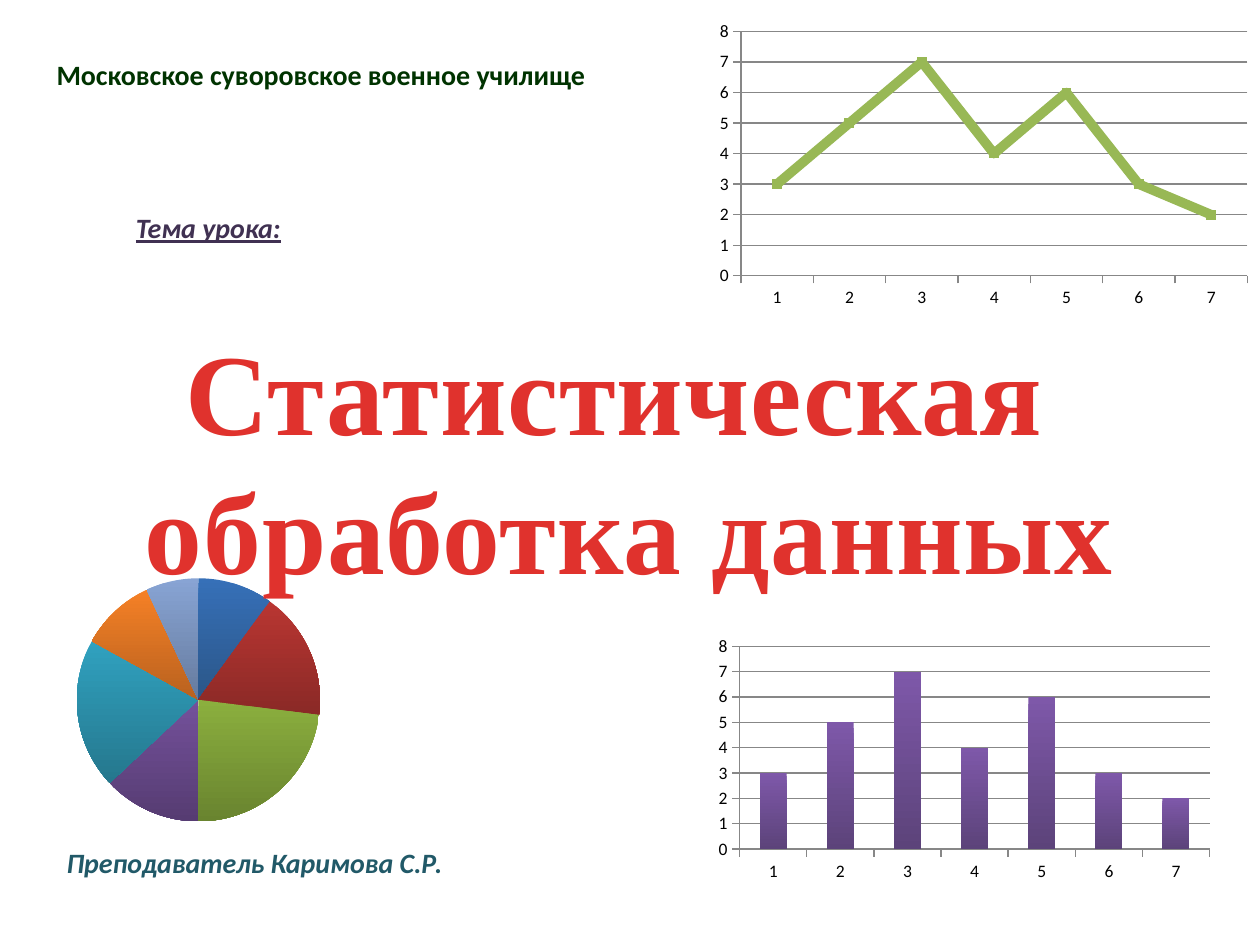
from dataclasses import dataclass

from lxml import etree
from pptx import Presentation, util as u
from pptx.chart import data as chart_data
from pptx.dml.color import RGBColor
from pptx.enum import chart as chart_enum, text
from pptx.oxml import ns

CATEGORIES = [str(number) for number in range(1, 8)]
SCORES = (3, 5, 7, 4, 6, 3, 2)
SHARES = (10, 17, 23, 13, 20, 10, 7)
AXIS_GREY = "878787"
LINE_GREEN = "98B855"
BAR_GRADIENT = ("7E58A9", "5C437A")
SLICE_GRADIENTS = (
    ("3670B8", "2B5688"), ("B93632", "8A2926"), ("8BAF3E", "69842F"),
    ("74519B", "563C72"), ("30A1BF", "25778D"), ("F58026", "B9621F"),
    ("88A4D4", "667B9E"),
)


@dataclass
class Box:
    left: float
    top: float
    width: float
    height: float

    def lengths(self) -> list[u.Length]:
        return [u.Inches(value) for value in (self.left, self.top, self.width, self.height)]


@dataclass
class ChartItem:
    kind: chart_enum.XL_CHART_TYPE
    values: tuple
    frame: Box
    plot_area: Box


PIE = ChartItem(chart_enum.XL_CHART_TYPE.PIE, SHARES,
                Box(0.36, 4.46, 2.43, 2.2), Box(0.61, 4.59, 1.93, 1.93))
COLUMNS = ChartItem(chart_enum.XL_CHART_TYPE.COLUMN_CLUSTERED, SCORES,
                    Box(5.63, 5.01, 4.06, 2.02), Box(5.87, 5.13, 3.73, 1.61))
LINE = ChartItem(chart_enum.XL_CHART_TYPE.LINE_MARKERS, SCORES,
                 Box(5.63, 0.12, 4.36, 2.37), Box(5.88, 0.25, 4.02, 1.94))


def color(value: str) -> RGBColor:
    return RGBColor.from_string(value)


def add_text(slide, box: Box, *lines: str, size=16, font="Calibri", fill="000000",
             bold=True, italic=False, underline=False, align=None, spacing=0):
    frame = slide.shapes.add_textbox(*box.lengths()).text_frame
    frame.word_wrap = False
    frame.auto_size = text.MSO_AUTO_SIZE.SHAPE_TO_FIT_TEXT
    for index, line in enumerate(lines):
        paragraph = frame.add_paragraph() if index else frame.paragraphs[0]
        paragraph.alignment = align
        run = paragraph.add_run()
        run.text = line
        run.font.name, run.font.size = font, u.Pt(size)
        run.font.bold, run.font.italic, run.font.underline = bold, italic, underline
        run.font.color.rgb = color(fill)
        if spacing:
            run.font._element.set("spc", str(round(spacing * 100)))


def set_plot_area(chart, frame: Box, plot: Box):
    """Place the inner plot area by fractions of the chart frame."""
    area = chart._chartSpace.chart.plotArea
    for old in area.findall(ns.qn("c:layout")):
        area.remove(old)
    layout = etree.Element(ns.qn("c:layout"))
    manual = etree.SubElement(layout, ns.qn("c:manualLayout"))
    settings = {
        "layoutTarget": "inner", "xMode": "edge", "yMode": "edge",
        "x": (plot.left - frame.left) / frame.width,
        "y": (plot.top - frame.top) / frame.height,
        "w": plot.width / frame.width, "h": plot.height / frame.height,
    }
    for name, value in settings.items():
        etree.SubElement(manual, ns.qn(f"c:{name}")).set("val", str(value))
    area.insert(0, layout)


def add_chart(slide, item: ChartItem):
    data = chart_data.CategoryChartData()
    data.categories = CATEGORIES
    data.add_series("Series 1", item.values)
    chart = slide.shapes.add_chart(item.kind, *item.frame.lengths(), data).chart
    chart.has_legend = chart.has_title = False
    chart.font.name, chart.font.size = "Calibri", u.Pt(10)
    chart.font.color.rgb = color("000000")
    set_plot_area(chart, item.frame, item.plot_area)
    return chart


def style_line(line, fill: str, width: float):
    line.color.rgb = color(fill)
    line.width = u.Pt(width)


def style_axes(chart):
    for axis in (chart.category_axis, chart.value_axis):
        axis.major_tick_mark = chart_enum.XL_TICK_MARK.OUTSIDE
        axis.minor_tick_mark = chart_enum.XL_TICK_MARK.NONE
        style_line(axis.format.line, AXIS_GREY, 0.75)
    values = chart.value_axis
    values.minimum_scale, values.maximum_scale, values.major_unit = 0, 8, 1
    values.has_major_gridlines = True
    style_line(values.major_gridlines.format.line, AXIS_GREY, 0.75)


def fill_gradient(fill, colors: tuple):
    """Shade from the first colour at the top to the second at the bottom."""
    fill.gradient()
    fill.gradient_angle = 270
    for stop, value in zip(fill.gradient_stops, colors):
        stop.color.rgb = color(value)


def add_pie(slide):
    plot = add_chart(slide, PIE).plots[0]
    plot.vary_by_categories = True
    for index, colors in enumerate(SLICE_GRADIENTS):
        slice_format = plot.series[0].points[index].format
        fill_gradient(slice_format.fill, colors)
        slice_format.line.fill.background()


def add_columns(slide):
    chart = add_chart(slide, COLUMNS)
    style_axes(chart)
    plot = chart.plots[0]
    plot.vary_by_categories = False
    plot.gap_width = 150
    fill_gradient(plot.series[0].format.fill, BAR_GRADIENT)


def add_line(slide):
    chart = add_chart(slide, LINE)
    style_axes(chart)
    chart.plots[0].vary_by_categories = False
    series = chart.plots[0].series[0]
    series.smooth = False
    style_line(series.format.line, LINE_GREEN, 5.5)
    series.marker.style = chart_enum.XL_MARKER_STYLE.SQUARE
    series.marker.size = 5
    series.marker.format.fill.solid()
    series.marker.format.fill.fore_color.rgb = color(LINE_GREEN)
    series.marker.format.line.fill.background()


def main():
    presentation = Presentation()
    presentation.slide_width, presentation.slide_height = u.Inches(10), u.Inches(7.5)
    slide = presentation.slides.add_slide(presentation.slide_layouts[6])

    # Pie lies behind the title
    add_pie(slide)

    # Title and captions
    add_text(slide, Box(1.01, 2.49, 7.97, 2.32), "Статистическая ", "обработка данных",
             size=66, font="Times New Roman", fill="E0322D",
             align=text.PP_ALIGN.CENTER, spacing=0.5)
    add_text(slide, Box(0.35, 0.41, 4.45, 0.37),
             "Московское суворовское военное училище", fill="003300")
    add_text(slide, Box(0.98, 1.62, 1.35, 0.37), "Тема урока:",
             fill="403152", italic=True, underline=True)
    add_text(slide, Box(0.43, 6.66, 3.23, 0.37), "Преподаватель Каримова С.Р.",
             fill="215968", italic=True)

    # Column and line charts
    add_columns(slide)
    add_line(slide)
    presentation.save("out.pptx")


if __name__ == "__main__":
    main()
